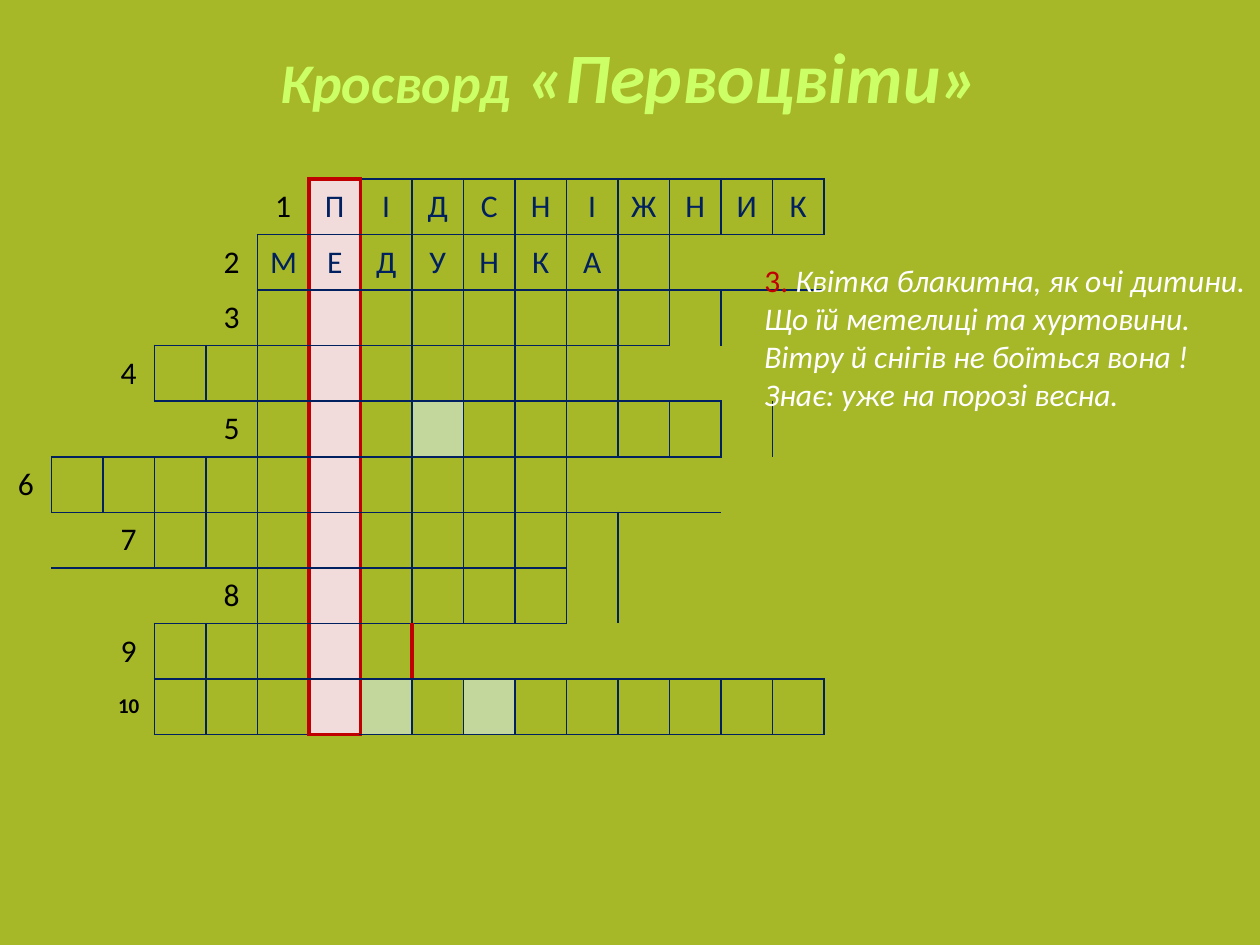
from lxml.etree import SubElement
from pptx import Presentation
from pptx.dml.color import RGBColor
from pptx.enum.text import MSO_ANCHOR, MSO_AUTO_SIZE, PP_ALIGN
from pptx.oxml.ns import qn
from pptx.util import Pt

PX = 914400 // 126
OLIVE = RGBColor(0xA6, 0xB7, 0x27)
LIME = RGBColor(0xCC, 0xFF, 0x66)
NAVY = RGBColor(0x00, 0x20, 0x60)
RED = RGBColor(0xC0, 0x00, 0x00)
PINK = RGBColor(0xF2, 0xDC, 0xDB)
GREEN = RGBColor(0xC3, 0xD6, 0x9B)
BLACK = RGBColor(0x00, 0x00, 0x00)
WHITE = RGBColor(0xFF, 0xFF, 0xFF)
FONT = "Calibri"

TITLE = [("Кросворд", 32), (" «Первоцвіти»", 40.5)]
RIDDLE_NUMBER = "3. "
RIDDLE = [
    "Квітка блакитна, як очі дитини.",
    "Що їй метелиці та хуртовини.",
    "Вітру й снігів не боїться вона !",
    "Знає: уже на порозі весна.",
]

ROWS, COLS, KEY_COL = 10, 16, 6
TABLE_BOX = (0, 179, 824, 556)
# One entry per row: first and last vertical line, any stray line, word
WORDS = [
    (6, 16, None, "ПІДСНІЖНИК"),
    (5, 13, None, "МЕДУНКА"),
    (5, 13, 14, ""),
    (3, 12, None, ""),
    (5, 14, 15, ""),
    (1, 11, None, ""),
    (3, 11, 12, ""),
    (5, 11, 12, ""),
    (3, 8, None, ""),
    (3, 16, None, ""),
]
# Start and end column of each horizontal line, top to bottom
RULES = [(6, 16), (5, 16), (5, 16), (3, 13), (3, 14), (1, 14),
         (1, 14), (1, 11), (3, 11), (3, 16), (3, 16)]
GREEN_CELLS = {(4, 8), (9, 7), (9, 9)}
RED_END = (8, 8)


def style(span, size, color, bold=None, italic=None):
    font = span.font
    font.name, font.size = FONT, Pt(size)
    font.bold, font.italic = bold, italic
    font.color.rgb = color


def vertical_color(row, line):
    first, last, stray, _ = WORDS[row]
    if line in (KEY_COL, KEY_COL + 1) or (row, line) == RED_END:
        return RED
    return NAVY if first <= line <= last or line == stray else None


def horizontal_color(line, col):
    if col == KEY_COL and line in (0, ROWS):
        return RED
    start, end = RULES[line]
    return NAVY if start <= col < end else None


def draw_borders(cell, row, col):
    properties = cell._tc.get_or_add_tcPr()
    sides = {
        "a:lnL": vertical_color(row, col),
        "a:lnR": vertical_color(row, col + 1),
        "a:lnT": horizontal_color(row, col),
        "a:lnB": horizontal_color(row + 1, col),
    }
    for tag, color in sides.items():
        width = Pt(2.25 if color == RED else 1)
        line = SubElement(properties, qn(tag), w=str(width))
        if color is None:
            SubElement(line, qn("a:noFill"))
        else:
            fill = SubElement(line, qn("a:solidFill"))
            SubElement(fill, qn("a:srgbClr"), val=str(color))


def fill_cell(cell, row, col):
    if col == KEY_COL or (row, col) in GREEN_CELLS:
        cell.fill.solid()
        cell.fill.fore_color.rgb = PINK if col == KEY_COL else GREEN
    else:
        cell.fill.background()


def write_cell(cell, row, col):
    first, _, _, word = WORDS[row]
    cell.vertical_anchor = MSO_ANCHOR.MIDDLE
    para = cell.text_frame.paragraphs[0]
    para.alignment = PP_ALIGN.CENTER
    para.font.size = Pt(18)
    if col == first - 1:
        para.text = str(row + 1)
        is_last = row == ROWS - 1
        style(para.runs[0], 12 if is_last else 18, BLACK, bold=is_last)
    elif first <= col < first + len(word):
        para.text = word[col - first]
        style(para.runs[0], 18, NAVY)


def add_crossword(page):
    left, top, width, height = (value * PX for value in TABLE_BOX)
    table = page.shapes.add_table(ROWS, COLS, left, top, width, height).table
    table.first_row = table.horz_banding = False
    for column in table.columns:
        column.width = width // COLS
    for row, table_row in enumerate(table.rows):
        table_row.height = height // ROWS
        for col, cell in enumerate(table_row.cells):
            draw_borders(cell, row, col)
            fill_cell(cell, row, col)
            write_cell(cell, row, col)


def set_title(page):
    title = page.shapes.title
    title.left, title.top, title.width, title.height = (
        value * PX for value in (63, 26, 1134, 158))
    frame = title.text_frame
    frame.vertical_anchor = MSO_ANCHOR.TOP
    para = frame.paragraphs[0]
    para.alignment = PP_ALIGN.CENTER
    for text, size in TITLE:
        span = para.add_run()
        span.text = text
        style(span, size, LIME, bold=True, italic=True)


def add_riddle(page):
    box = page.shapes.add_textbox(*(value * PX for value in (752, 255, 512, 165)))
    frame = box.text_frame
    frame.word_wrap = False
    frame.auto_size = MSO_AUTO_SIZE.SHAPE_TO_FIT_TEXT
    for index, text in enumerate(RIDDLE):
        para = frame.add_paragraph() if index else frame.paragraphs[0]
        if index == 0:
            number = para.add_run()
            number.text = RIDDLE_NUMBER
            style(number, 18, RED)
        span = para.add_run()
        span.text = text
        style(span, 18, WHITE, italic=True)


def main():
    deck = Presentation()
    deck.slide_width, deck.slide_height = 1260 * PX, 945 * PX
    page = deck.slides.add_slide(deck.slide_layouts[5])
    page.background.fill.solid()
    page.background.fill.fore_color.rgb = OLIVE
    add_crossword(page)
    set_title(page)
    add_riddle(page)
    deck.save("out.pptx")


if __name__ == "__main__":
    main()
